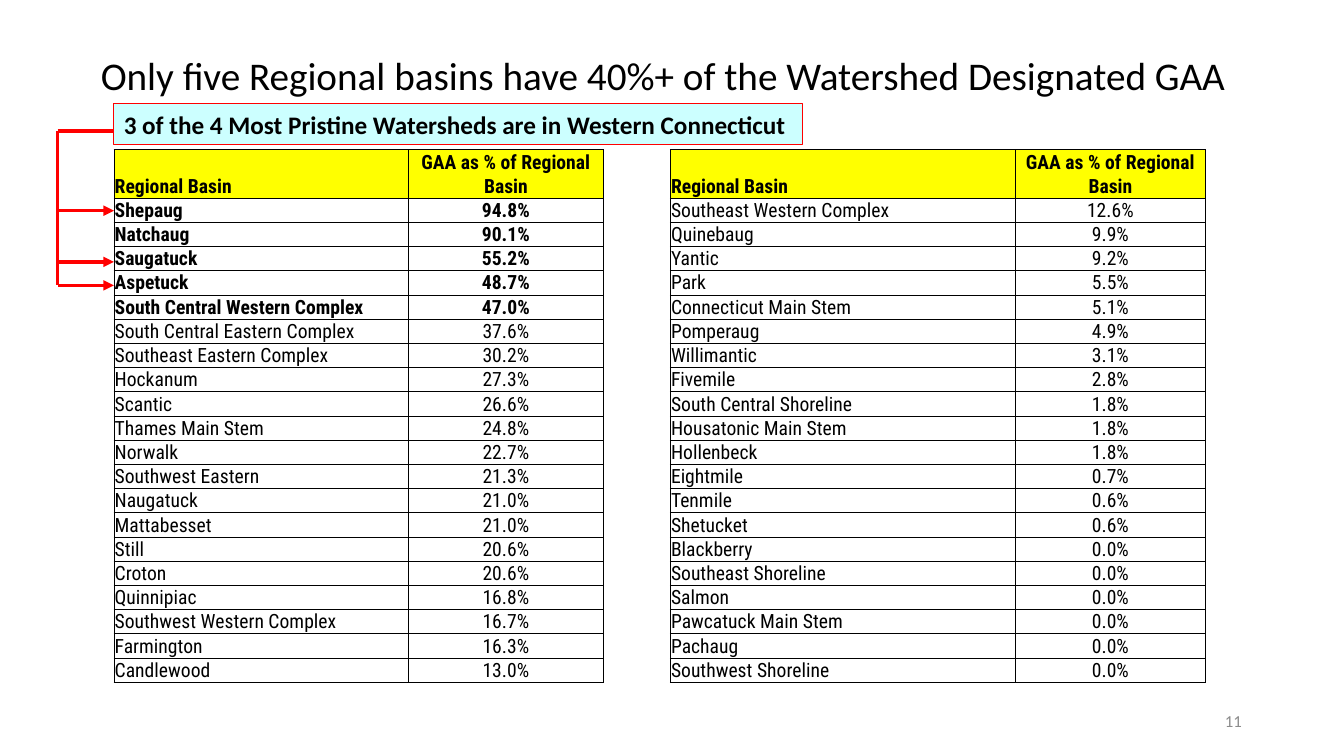
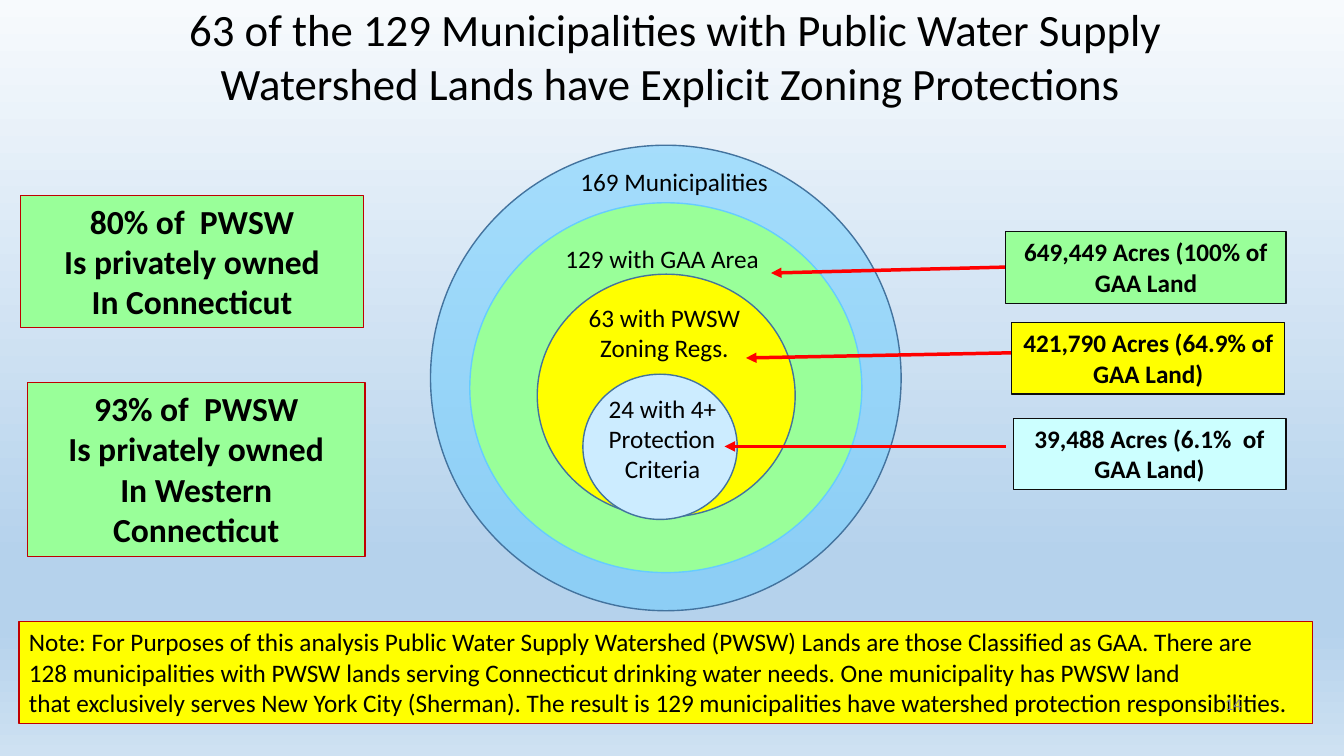
from itertools import cycle

from lxml.etree import SubElement
from pptx import Presentation
from pptx.dml.color import RGBColor
from pptx.enum.shapes import MSO_CONNECTOR as Connector, MSO_SHAPE as Shape
from pptx.enum.text import MSO_ANCHOR as Anchor, MSO_AUTO_SIZE as AutoSize, PP_ALIGN as Align
from pptx.oxml.ns import qn
from pptx.util import Cm, Pt

COLORS = {
    "black": "000000", "ink": "0D0D0D", "gray": "8C8C8C", "red": "FF0000",
    "crimson": "C00000", "yellow": "FFFF00", "aqua": "CCFFFF", "green": "99FF99",
    "sky": "66CCFF", "ice": "CCECFF", "navy": "43739E",
    "dawn": "F7FAFD", "haze": "B5D2EC", "mist": "CEE1F2",
}
BODY_FONT = "Calibri"
TABLE_FONT = "Roboto Condensed"
ALIGNMENTS = {"l": Align.LEFT, "c": Align.CENTER, "r": Align.RIGHT}
SKY_STOPS = [(0, "dawn"), (74, "haze"), (83, "haze"), (100, "mist")]

HEADINGS = ("Regional Basin", "GAA as % of Regional Basin")
HEADER_HEIGHT, ROW_HEIGHT = 1.22, 0.61
TOP_BASINS = [
    ("Shepaug", 94.8), ("Natchaug", 90.1), ("Saugatuck", 55.2), ("Aspetuck", 48.7),
    ("South Central Western Complex", 47.0), ("South Central Eastern Complex", 37.6),
    ("Southeast Eastern Complex", 30.2), ("Hockanum", 27.3), ("Scantic", 26.6),
    ("Thames Main Stem", 24.8), ("Norwalk", 22.7), ("Southwest Eastern", 21.3),
    ("Naugatuck", 21.0), ("Mattabesset", 21.0), ("Still", 20.6), ("Croton", 20.6),
    ("Quinnipiac", 16.8), ("Southwest Western Complex", 16.7), ("Farmington", 16.3),
    ("Candlewood", 13.0),
]
OTHER_BASINS = [
    ("Southeast Western Complex", 12.6), ("Quinebaug", 9.9), ("Yantic", 9.2), ("Park", 5.5),
    ("Connecticut Main Stem", 5.1), ("Pomperaug", 4.9), ("Willimantic", 3.1),
    ("Fivemile", 2.8), ("South Central Shoreline", 1.8), ("Housatonic Main Stem", 1.8),
    ("Hollenbeck", 1.8), ("Eightmile", 0.7), ("Tenmile", 0.6), ("Shetucket", 0.6),
    ("Blackberry", 0.0), ("Southeast Shoreline", 0.0), ("Salmon", 0.0),
    ("Pawcatuck Main Stem", 0.0), ("Pachaug", 0.0), ("Southwest Shoreline", 0.0),
]

RINGS = [
    ((0, 0, 11.86, 11.73), "sky", "navy", 50,
     ["169 Municipalities"], (3.53, 0.41, 5.28, 1.02), "l"),
    ((0.99, 1.45, 9.88, 9.32), "green", "sky", 100,
     ["129 with GAA Area"], (3.15, 2.34, 5.44, 1.02), "l"),
    ((2.69, 3.25, 6.5, 6.12), "yellow", "navy", 100,
     ["63 with PWSW", "Zoning Regs."], (3.71, 3.84, 4.37, 1.8), "c"),
    ((3.84, 5.77, 3.89, 3.66), "ice", "navy", 100,
     ["24 with 4+", "Protection", "Criteria"], (4.24, 6.12, 3.4, 2.57), "llc"),
]
CALLOUTS = [
    ("649,449 Acres (100% of GAA Land", "green", (0, 0, 7.06, 1.8), (0, 0.89), (-5.92, 1.04)),
    ("421,790 Acres (64.9% of GAA Land)", "yellow", (0.15, 2.29, 6.88, 1.8),
     (0.15, 3.05), (-6.55, 3.18)),
    ("39,488 Acres (6.1%  of GAA Land)", "aqua", (0.18, 4.7, 6.88, 1.8),
     (0, 5.41), (-7.09, 5.41)),
]
FACTS = [
    ("80% of  PWSW", "In Connecticut", (0, 0, 8.66, 3.33)),
    ("93% of  PWSW", "In Western Connecticut", (0.18, 4.72, 8.51, 4.37)),
]
NOTE = [
    "Note: For Purposes of this analysis Public Water Supply Watershed (PWSW) Lands are those "
    "Classified as GAA. There are",
    "128 municipalities with PWSW lands serving Connecticut drinking water needs. "
    "One municipality has PWSW land",
    "that exclusively serves New York City (Sherman). The result is 129 municipalities have "
    "watershed protection responsibilities.",
]


def rgb(name):
    return RGBColor.from_string(COLORS[name])


def shift(origin, box):
    return (origin[0] + box[0], origin[1] + box[1], *box[2:])


def write_text(frame, lines, size=18, font=BODY_FONT, color="black", bold=False, align="l"):
    for index, (line, side) in enumerate(zip(lines, cycle(align))):
        para = frame.paragraphs[0] if index == 0 else frame.add_paragraph()
        para.alignment = ALIGNMENTS[side]
        span = para.add_run()
        span.text = line
        span.font.size = Pt(size)
        span.font.name = font
        span.font.bold = bold
        span.font.color.rgb = rgb(color)


def add_label(page, box, lines, wrap=False, grow=True, anchor=Anchor.TOP, **style):
    label = page.shapes.add_textbox(*map(Cm, box))
    fit_text(label.text_frame, lines, wrap, grow, anchor, **style)


def fit_text(frame, lines, wrap, grow, anchor, **style):
    frame.word_wrap = wrap
    frame.auto_size = AutoSize.SHAPE_TO_FIT_TEXT if grow else AutoSize.NONE
    frame.vertical_anchor = anchor
    write_text(frame, lines, **style)


def add_outlined(page, kind, box, fill, line, width=0.75):
    shape = page.shapes.add_shape(kind, *map(Cm, box))
    shape.shadow.inherit = False
    shape.fill.solid()
    shape.fill.fore_color.rgb = rgb(fill)
    shape.line.color.rgb = rgb(line)
    shape.line.width = Pt(width)
    return shape


def add_panel(page, box, lines, fill, line, wrap=True, **style):
    panel = add_outlined(page, Shape.RECTANGLE, box, fill, line)
    fit_text(panel.text_frame, lines, wrap, True, Anchor.TOP, **style)


def add_red_line(page, start, end, arrow=False):
    line = page.shapes.add_connector(Connector.STRAIGHT, *map(Cm, (*start, *end)))
    line.line.color.rgb = rgb("red")
    line.line.width = Pt(2.5)
    if arrow:
        SubElement(line.line._get_or_add_ln(), qn("a:tailEnd"), type="triangle")
    SubElement(line._element.spPr, qn("a:effectLst"))


def add_page_number(page, top, number):
    add_label(page, (23.93, top, 7.62, 1.02), [number], wrap=True, grow=False,
              anchor=Anchor.MIDDLE, size=12, color="gray", align="r")


def format_cell(cell, text, fill=None, **style):
    cell.margin_left = cell.margin_right = cell.margin_top = Cm(0.02)
    cell.margin_bottom = Cm(0)
    cell.vertical_anchor = Anchor.BOTTOM
    write_text(cell.text_frame, [text], size=14, font=TABLE_FONT, **style)
    properties = cell._tc.get_or_add_tcPr()
    for edge in ("a:lnL", "a:lnR", "a:lnT", "a:lnB"):
        border = SubElement(properties, qn(edge), w=str(Pt(0.5)))
        solid = SubElement(border, qn("a:solidFill"))
        SubElement(solid, qn("a:srgbClr"), val=COLORS["black"])
    if fill:
        cell.fill.solid()
        cell.fill.fore_color.rgb = rgb(fill)
    else:
        cell.fill.background()


def add_basin_table(page, left, top, widths, basins, bold_rows=0):
    height = HEADER_HEIGHT + ROW_HEIGHT * len(basins)
    frame = page.shapes.add_table(len(basins) + 1, 2, *map(Cm, (left, top, sum(widths), height)))
    table = frame.table
    table.first_row = table.horz_banding = False
    for column, width in zip(table.columns, widths):
        column.width = Cm(width)
    records = [HEADINGS] + [(name, f"{share:.1f}%") for name, share in basins]
    for index, record in enumerate(records):
        table.rows[index].height = Cm(ROW_HEIGHT if index else HEADER_HEIGHT)
        for column, (text, align) in enumerate(zip(record, "lc")):
            format_cell(table.cell(index, column), text, fill=None if index else "yellow",
                        bold=index <= bold_rows, align=align)


def add_bracket(page, left, top, width, drops):
    add_red_line(page, (left, top), (left, top + drops[-1]))
    add_red_line(page, (left, top), (left + width, top))
    for drop in drops:
        add_red_line(page, (left, top + drop), (left + width, top + drop), arrow=True)


def add_rings(page, origin):
    for box, fill, line, opacity, lines, label_box, align in RINGS:
        ring = add_outlined(page, Shape.OVAL, shift(origin, box), fill, line, width=1)
        if opacity < 100:
            tint = ring._element.spPr.find(qn("a:solidFill")).find(qn("a:srgbClr"))
            SubElement(tint, qn("a:alpha"), val=str(opacity * 1000))
        add_label(page, shift(origin, label_box), lines, align=align)


def add_callouts(page, origin):
    for text, fill, box, start, tip in CALLOUTS:
        add_red_line(page, shift(origin, start), shift(origin, tip), arrow=True)
        add_panel(page, shift(origin, box), [text], fill, "ink", bold=True, align="c")


def add_facts(page, origin):
    for share, place, box in FACTS:
        add_panel(page, shift(origin, box), [share, "Is privately owned", place],
                  "green", "crimson", size=24, bold=True, align="c")


def paint_sky(page):
    fill = page.background.fill
    fill.gradient()
    fill.gradient_angle = 270
    stops = page.element.find(".//" + qn("a:gsLst"))
    stops.clear()
    for position, color in SKY_STOPS:
        stop = SubElement(stops, qn("a:gs"), pos=str(position * 1000))
        SubElement(stop, qn("a:srgbClr"), val=COLORS[color])


def build_basin_page(page):
    add_basin_table(page, 2.87, 3.77, (7.42, 4.92), TOP_BASINS, bold_rows=5)
    add_basin_table(page, 16.89, 3.77, (8.7, 4.79), OTHER_BASINS)
    add_label(page, (2.29, 1.17, 29.16, 1.45),
              ["Only five Regional basins have 40%+ of the Watershed Designated GAA"], size=28)
    add_page_number(page, 17.65, "11")
    add_panel(page, (2.87, 2.62, 17.35, 1.02),
              ["3 of the 4 Most Pristine Watersheds are in Western Connecticut"],
              "aqua", "red", wrap=False, bold=True)
    add_bracket(page, 1.45, 3.3, 1.42, (2.01, 3.3, 3.89))


def build_zoning_page(page):
    paint_sky(page)
    add_rings(page, (10.85, 3.66))
    add_label(page, (2.31, -0.08, 29.44, 3),
              ["63 of the 129 Municipalities with Public Water Supply Watershed Lands "
               "have Explicit Zoning Protections "], wrap=True, size=32, align="c")
    add_panel(page, (0.48, 15.67, 32.61, 2.57), NOTE, "yellow", "crimson", wrap=False)
    add_page_number(page, 17.22, "14")
    add_callouts(page, (25.35, 5.84))
    add_facts(page, (0.51, 4.93))


def main():
    deck = Presentation()
    deck.slide_width, deck.slide_height = Cm(33.87), Cm(19.05)
    for build in (build_basin_page, build_zoning_page):
        build(deck.slides.add_slide(deck.slide_layouts[6]))
    deck.save("out.pptx")


if __name__ == "__main__":
    main()
